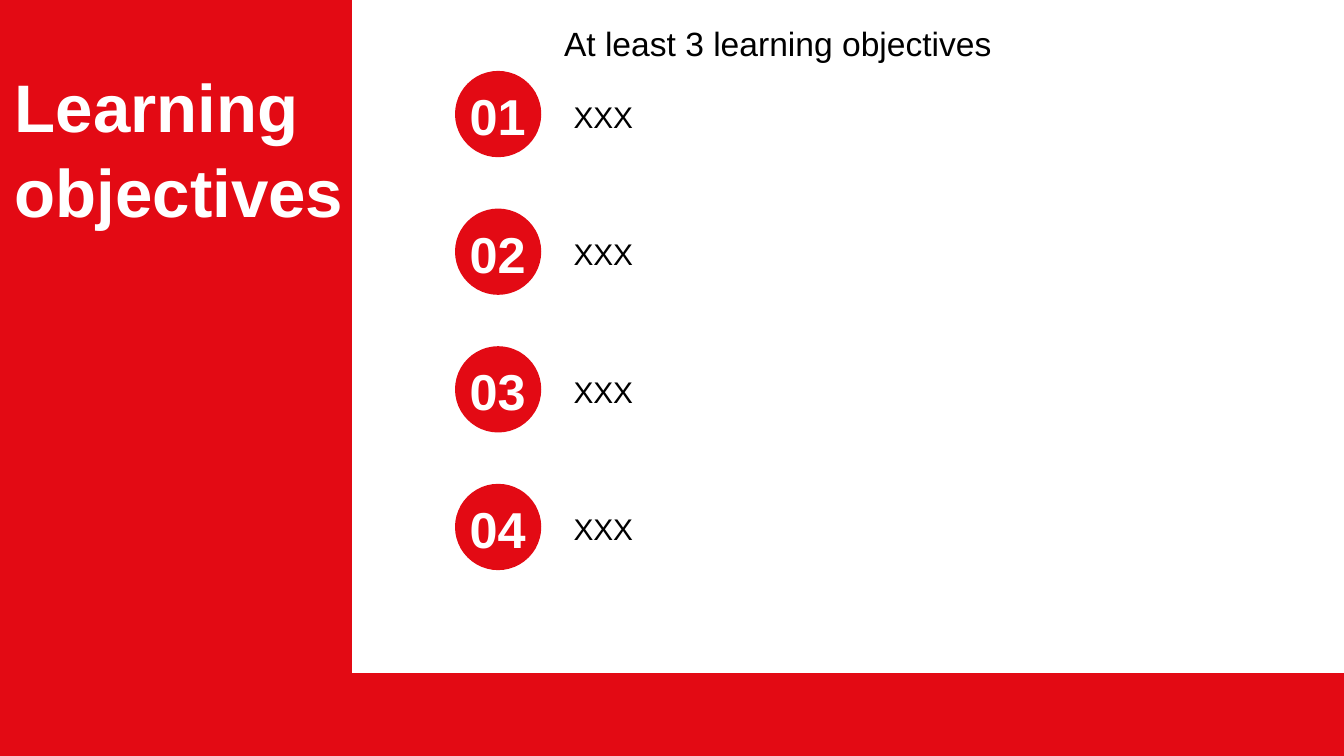
from dataclasses import dataclass

from pptx import Presentation
from pptx.dml.color import RGBColor
from pptx.enum.shapes import MSO_SHAPE
from pptx.enum.text import MSO_ANCHOR, PP_ALIGN
from pptx.util import Cm, Pt

RECTANGLE = MSO_SHAPE.RECTANGLE
OVAL = MSO_SHAPE.OVAL
TOP = MSO_ANCHOR.TOP
MIDDLE = MSO_ANCHOR.MIDDLE
LEFT = PP_ALIGN.LEFT
CENTER = PP_ALIGN.CENTER


@dataclass(frozen=True)
class Theme:
    font: str = "Arial"
    red: RGBColor = RGBColor(0xE3, 0x0A, 0x14)
    white: RGBColor = RGBColor(0xFF, 0xFF, 0xFF)
    black: RGBColor = RGBColor(0x00, 0x00, 0x00)
    title: float = 36
    number: float = 27
    heading: float = 18
    body: float = 16


THEME = Theme()
OBJECTIVES = ["XXX", "XXX", "XXX", "XXX"]
ROW_STEP = 2.6


def add_block(shapes, kind, left, top, width, height, outlined=False):
    """Add a plain red shape, measured in centimetres."""
    block = shapes.add_shape(kind, Cm(left), Cm(top), Cm(width), Cm(height))
    block.shadow.inherit = False
    block.fill.solid()
    block.fill.fore_color.rgb = THEME.red
    if outlined:
        block.line.color.rgb = THEME.red
        block.line.width = Pt(0.75)
    else:
        block.line.fill.background()


def add_text(shapes, text, left, top, width, height, size, color,
             bold=False, align=LEFT, anchor=TOP, wrap=True,
             inset=0.25, spacing=None):
    """Add a one-paragraph text box, measured in centimetres."""
    box = shapes.add_textbox(Cm(left), Cm(top), Cm(width), Cm(height))
    frame = box.text_frame
    frame.word_wrap = wrap
    frame.vertical_anchor = anchor
    frame.margin_left = Cm(inset)
    frame.text = text
    para = frame.paragraphs[0]
    para.alignment = align
    if spacing:
        para.line_spacing = spacing
    font = para.runs[0].font
    font.name = THEME.font
    font.size = Pt(size)
    font.bold = bold
    font.color.rgb = color


def add_objective(page, index, text):
    """Add one numbered badge with its objective beside it."""
    offset = index * ROW_STEP
    badge = page.shapes.add_group_shape()
    add_block(badge.shapes, OVAL, 8.6, 1.34 + offset, 1.63, 1.63)
    add_text(badge.shapes, f"{index + 1:02d}", 8.4, 1.48 + offset, 2.01, 1.42,
             THEME.number, THEME.white, bold=True, align=CENTER)
    add_text(page.shapes, text, 10.59, 1.73 + offset, 10.62, 0.94,
             THEME.body, THEME.black)


def main():
    deck = Presentation()
    deck.slide_width = Cm(25.4)
    deck.slide_height = Cm(14.28)
    page = deck.slides.add_slide(deck.slide_layouts[6])

    # Red frame: footer band and sidebar
    add_block(page.shapes, RECTANGLE, 0, 12.73, 25.4, 1.53, outlined=True)
    add_block(page.shapes, RECTANGLE, 0, 0, 6.65, 12.78)

    # Sidebar title
    add_text(page.shapes, "Learning objectives", -0.3, 1.09, 7.16, 3.33,
             THEME.title, THEME.white, bold=True, anchor=MIDDLE,
             inset=0.58, spacing=1.05)

    # Numbered objectives
    for index, text in enumerate(OBJECTIVES):
        add_objective(page, index, text)

    # Heading above the list
    add_text(page.shapes, "At least 3 learning objectives", 10.41, 0.3,
             8.84, 1.02, THEME.heading, THEME.black, wrap=False)

    deck.save("out.pptx")


if __name__ == "__main__":
    main()
